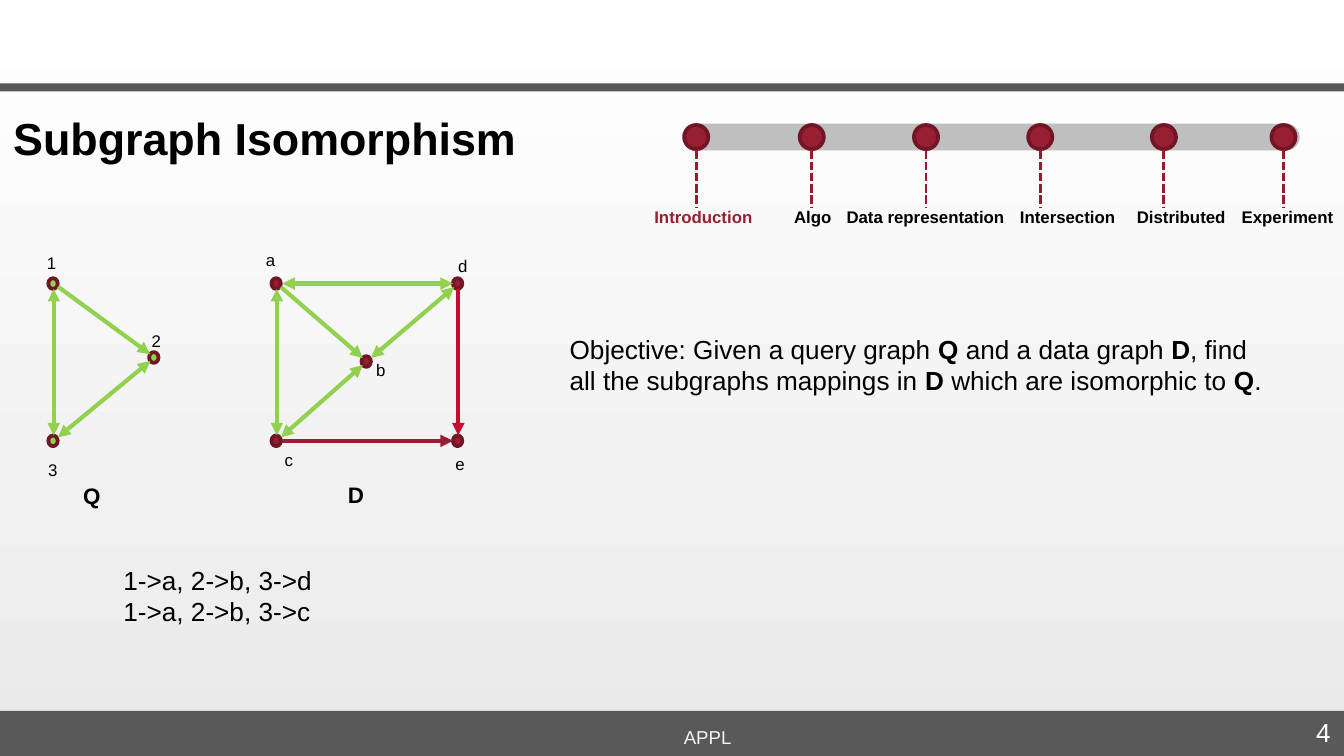
import math
from dataclasses import dataclass

from lxml import etree
from pptx import Presentation
from pptx import util as u
from pptx.dml.color import RGBColor
from pptx.enum import dml, shapes, text
from pptx.oxml import ns

PX = 9144  # EMU in one px: 100 px to the inch
WIDTH = 1000


@dataclass(frozen=True)
class Theme:
    font: str = "Arial"
    ink: str = "000000"
    white: str = "FFFFFF"
    footer_ink: str = "F2F2F2"
    page_end: str = "EAEAEA"
    bar: str = "595959"
    track: str = "BFBFBF"
    crimson: str = "981E32"
    rim: str = "701625"
    dash: str = "981A2F"
    green: str = "92D050"
    red: str = "C60C30"
    title: int = 24
    body: int = 14
    caption: int = 12
    footer: int = 10
    label: int = 9


T = Theme()


def color(value):
    return RGBColor.from_string(value)


def write(slide, box, lines, size, ink=T.ink, bold=False,
          align=text.PP_ALIGN.LEFT, anchor=text.MSO_ANCHOR.TOP):
    """Add a text box; each line is a list of words, every second one toggling bold."""
    frame = slide.shapes.add_textbox(*(v * PX for v in box)).text_frame
    frame.word_wrap = True
    frame.vertical_anchor = anchor
    for i, words in enumerate(lines):
        paragraph = frame.paragraphs[0] if i == 0 else frame.add_paragraph()
        paragraph.alignment = align
        for j, word in enumerate(words):
            run = paragraph.add_run()
            run.text = word
            looks = {"name": T.font, "size": u.Pt(size), "bold": bold or j % 2 == 1}
            for key, value in looks.items():
                setattr(run.font, key, value)
            run.font.color.rgb = color(ink)
    return frame


def draw(slide, kind, box, fill, rim=None):
    shape = slide.shapes.add_shape(kind, *(v * PX for v in box))
    shape.shadow.inherit = False
    shape.fill.solid()
    shape.fill.fore_color.rgb = color(fill)
    if rim:
        shape.line.color.rgb = color(rim)
        shape.line.width = u.Pt(2)
    else:
        shape.line.fill.background()
    return shape


def connect(slide, start, end, ink, width, arrows=(), dash=None):
    """Add a straight line; arrows names the ends (headEnd, tailEnd) that carry a triangle."""
    link = slide.shapes.add_connector(
        shapes.MSO_CONNECTOR.STRAIGHT, *(round(v * PX) for v in (*start, *end)))
    link.line.color.rgb = color(ink)
    link.line.width = u.Pt(width)
    if dash:
        link.line.dash_style = dash
    outline = link.line._get_or_add_ln()
    for arrow in arrows:
        etree.SubElement(outline, ns.qn(f"a:{arrow}"), type="triangle")
    etree.SubElement(link._element.spPr, ns.qn("a:effectLst"))


def build_page(slide):
    fill = slide.background.fill
    fill.gradient()
    fill.gradient_angle = 90
    for stop, value in zip(fill.gradient_stops, (T.page_end, T.white)):
        stop.color.rgb = color(value)
    for top, height in ((529, 34), (62, 6)):
        draw(slide, shapes.MSO_SHAPE.RECTANGLE, (0, top, WIDTH, height), T.bar)


def build_title(slide, box, title):
    paragraph = write(slide, box, [[title]], T.title, bold=True).paragraphs[0]
    paragraph.line_spacing = u.Pt(22)


def build_footer(slide, box, name, number):
    left, top, width, height = box
    write(slide, (left + 190, top, 673, height), [[name]], T.footer, T.footer_ink,
          align=text.PP_ALIGN.CENTER, anchor=text.MSO_ANCHOR.BOTTOM)
    write(slide, (left + width - 136, top, 136, height), [[number]], T.body, T.white,
          align=text.PP_ALIGN.RIGHT)


def build_timeline(slide, box, steps, current):
    """Steps are (name, stop centre, label left, label width), measured from the box."""
    left, top, width, height = box
    track = draw(slide, shapes.MSO_SHAPE.ROUNDED_RECTANGLE, box, T.track)
    track.adjustments[0] = 0.5
    for name, centre, label_left, label_width in steps:
        x = left + centre
        draw(slide, shapes.MSO_SHAPE.OVAL, (x - 9, top + 1, 18, 18), T.crimson, T.rim)
        connect(slide, (x, top + height), (x, top + 63), T.dash, 1.5,
                dash=dml.MSO_LINE.SQUARE_DOT)
        write(slide, (left + label_left, top + 57, label_width, 25), [[name]], T.label,
              T.crimson if name == current else T.ink, bold=True)


def build_graph(slide, origin, nodes, edges, node_fill, caption, caption_at):
    """Nodes map a name to its centre and its label's corner, measured from origin."""
    left, top = origin
    for name, ((x, y), (label_x, label_y)) in nodes.items():
        draw(slide, shapes.MSO_SHAPE.OVAL, (left + x - 4, top + y - 4, 7, 8),
             node_fill, T.rim)
        write(slide, (left + label_x, top + label_y, 35, 25), [[name]], T.label)
    for first, last, ink, both_ways in edges:
        (x1, y1), (x2, y2) = nodes[first][0], nodes[last][0]
        gap = 4 / math.dist((x1, y1), (x2, y2))
        dx, dy = (x2 - x1) * gap, (y2 - y1) * gap
        connect(slide, (left + x1 + dx, top + y1 + dy), (left + x2 - dx, top + y2 - dy),
                ink, 2.25, ("headEnd", "tailEnd") if both_ways else ("tailEnd",))
    write(slide, (left + caption_at[0], top + caption_at[1], 125, 30), [[caption]],
          T.caption, bold=True)


def main():
    deck = Presentation()
    deck.slide_width = WIDTH * PX
    deck.slide_height = deck.slide_width * 9 // 16
    slide = deck.slides.add_slide(deck.slide_layouts[6])

    build_page(slide)
    build_title(slide, (0, 87, 992, 80), "Subgraph Isomorphism")
    build_footer(slide, (0, 528, WIDTH, 34), "APPL", "4")

    query_nodes = {
        "1": ((15, 30), (0, 2)),
        "2": ((90, 85), (78, 60)),
        "3": ((15, 147), (1, 156)),
    }
    query_edges = [("2", "3", T.green, True), ("1", "3", T.green, True),
                   ("1", "2", T.green, False)]
    build_graph(slide, (25, 181), query_nodes, query_edges, T.green, "Q", (27, 173))

    data_nodes = {
        "a": ((18, 30), (0, 0)),
        "b": ((85, 88), (82, 82)),
        "c": ((18, 147), (14, 149)),
        "d": ((153, 30), (143, 4)),
        "e": ((153, 147), (141, 152)),
    }
    data_edges = [("b", "c", T.green, True), ("a", "c", T.green, True),
                  ("a", "d", T.green, True), ("d", "b", T.green, True),
                  ("a", "b", T.green, False), ("d", "e", T.red, False),
                  ("c", "e", T.crimson, False)]
    build_graph(slide, (188, 181), data_nodes, data_edges, T.crimson, "D", (61, 172))

    write(slide, (414, 243, 540, 155), [[
        "Objective: Given a query graph ", "Q", " and a data graph ", "D",
        ", find all the subgraphs mappings in ", "D", " which are isomorphic to ", "Q", "."
    ]], T.body)
    write(slide, (82, 415, 434, 88), [["1->a, 2->b, 3->d"], ["1->a, 2->b, 3->c"]], T.body)

    steps = [("Introduction", 9, -32, 118), ("Algo", 95, 72, 118),
             ("Data representation", 180, 111, 198), ("Intersection", 265, 240, 198),
             ("Distributed", 357, 327, 118), ("Experiment", 446, 405, 118)]
    build_timeline(slide, (509, 92, 458, 20), steps, "Introduction")

    deck.save("out.pptx")


if __name__ == "__main__":
    main()
